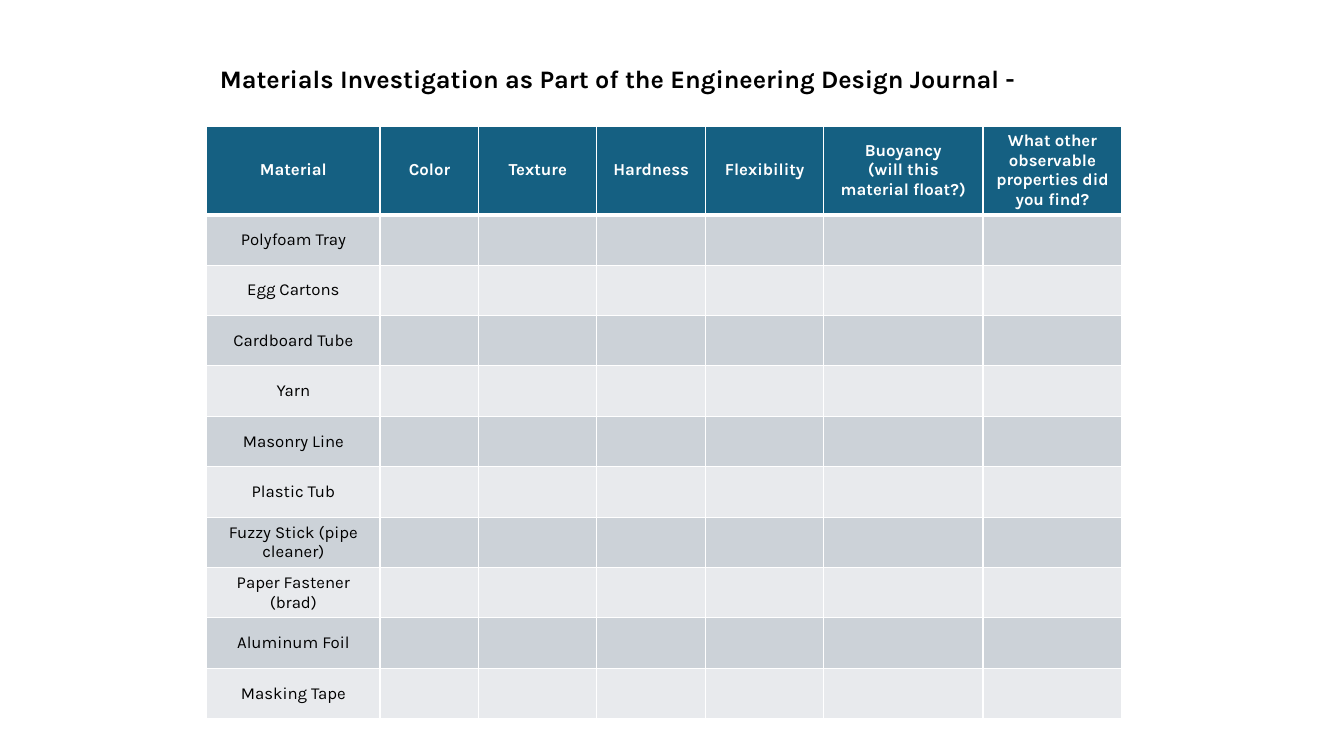
from lxml.etree import SubElement
from pptx import Presentation
from pptx.dml.color import RGBColor
from pptx.enum.text import MSO_ANCHOR, MSO_AUTO_SIZE, PP_ALIGN
from pptx.oxml import parse_xml
from pptx.oxml.ns import nsdecls, qn
from pptx.util import Emu, Pt

PX = 9144
HEADERS = [
    "Material", "Color", "Texture", "Hardness", "Flexibility",
    "Buoyancy\n(will this material float?)",
    "What other observable properties did you find?",
]
MATERIALS = [
    "Polyfoam Tray", "Egg Cartons", "Cardboard Tube", "Yarn", "Masonry Line",
    "Plastic Tub", "Fuzzy Stick (pipe cleaner)", "Paper Fastener (brad)",
    "Aluminum Foil", "Masking Tape",
]
COLUMN_WIDTHS = [172, 98, 117, 108, 117, 158, 138]
HEADER_HEIGHT, ROW_HEIGHT = 87, 50


def px(length):
    """Turn whole px into EMU."""
    return Emu(length * PX)


def color(hex_string):
    """Turn a hex string into a colour."""
    return RGBColor.from_string(hex_string)


class SlideBuilder:
    """Hold the style and the current slide."""

    font = "Karla"
    black, white = "000000", "FFFFFF"
    header_fill = "156082"
    band_fills = ["CCD2D8", "E8EAED"]

    def __init__(self, presentation):
        """Add a title-only slide."""
        self.slide = presentation.slides.add_slide(presentation.slide_layouts[5])

    def set_text(self, text_frame, text, size, text_color, bold, alignment):
        """Set text and format its runs."""
        text_frame.text = text
        for paragraph in text_frame.paragraphs:
            paragraph.alignment = alignment
            for run in paragraph.runs:
                run.font.name = self.font
                run.font.size = Pt(size)
                run.font.bold = bold
                run.font.color.rgb = color(text_color)

    def title(self, text, left, top, width, height):
        """Move and format the title placeholder."""
        shape = self.slide.shapes.title
        shape.left, shape.top = px(left), px(top)
        shape.width, shape.height = px(width), px(height)
        text_frame = shape.text_frame
        text_frame.word_wrap = True
        text_frame.auto_size = MSO_AUTO_SIZE.NONE
        text_frame.vertical_anchor = MSO_ANCHOR.TOP
        self.set_text(text_frame, text, 18, self.black, True, PP_ALIGN.LEFT)

    def borders(self, cell, top, bottom):
        """Draw white cell borders with widths in points."""
        properties = cell._tc.get_or_add_tcPr()
        sides = [("lnL", 1), ("lnR", 1), ("lnT", top), ("lnB", bottom)]
        for index, (side, width) in enumerate(sides):
            line = parse_xml(f'<a:{side} {nsdecls("a")} w="{Pt(width)}"/>')
            fill = SubElement(line, qn("a:solidFill"))
            SubElement(fill, qn("a:srgbClr"), val=self.white)
            properties.insert(index, line)

    def cell(self, cell, text, row):
        """Fill and format one table cell."""
        is_header = row == 0
        fill = self.header_fill if is_header else self.band_fills[(row - 1) % 2]
        cell.fill.solid()
        cell.fill.fore_color.rgb = color(fill)
        cell.vertical_anchor = MSO_ANCHOR.MIDDLE
        text_color = self.white if is_header else self.black
        self.set_text(cell.text_frame, text, 12, text_color, is_header, PP_ALIGN.CENTER)
        self.borders(cell, 3 if row == 1 else 1, 3 if is_header else 1)

    def table(self, rows, left, top, widths, heights):
        """Add a table from rows of text."""
        table = self.slide.shapes.add_table(
            len(rows), len(widths), px(left), px(top),
            px(sum(widths)), px(sum(heights)),
        ).table
        for column, width in zip(table.columns, widths):
            column.width = px(width)
        for row_index, (texts, height) in enumerate(zip(rows, heights)):
            table.rows[row_index].height = px(height)
            for column_index, text in enumerate(texts):
                self.cell(table.cell(row_index, column_index), text, row_index)


def main():
    """Build and save the presentation."""
    presentation = Presentation()
    presentation.slide_width, presentation.slide_height = px(1333), px(750)
    builder = SlideBuilder(presentation)
    builder.title(
        "Materials Investigation as Part of the Engineering Design Journal -",
        208, 58, 817, 40,
    )
    blanks = [""] * (len(HEADERS) - 1)
    rows = [HEADERS] + [[material] + blanks for material in MATERIALS]
    heights = [HEADER_HEIGHT] + [ROW_HEIGHT] * len(MATERIALS)
    builder.table(rows, 205, 125, COLUMN_WIDTHS, heights)
    presentation.save("out.pptx")


if __name__ == "__main__":
    main()
